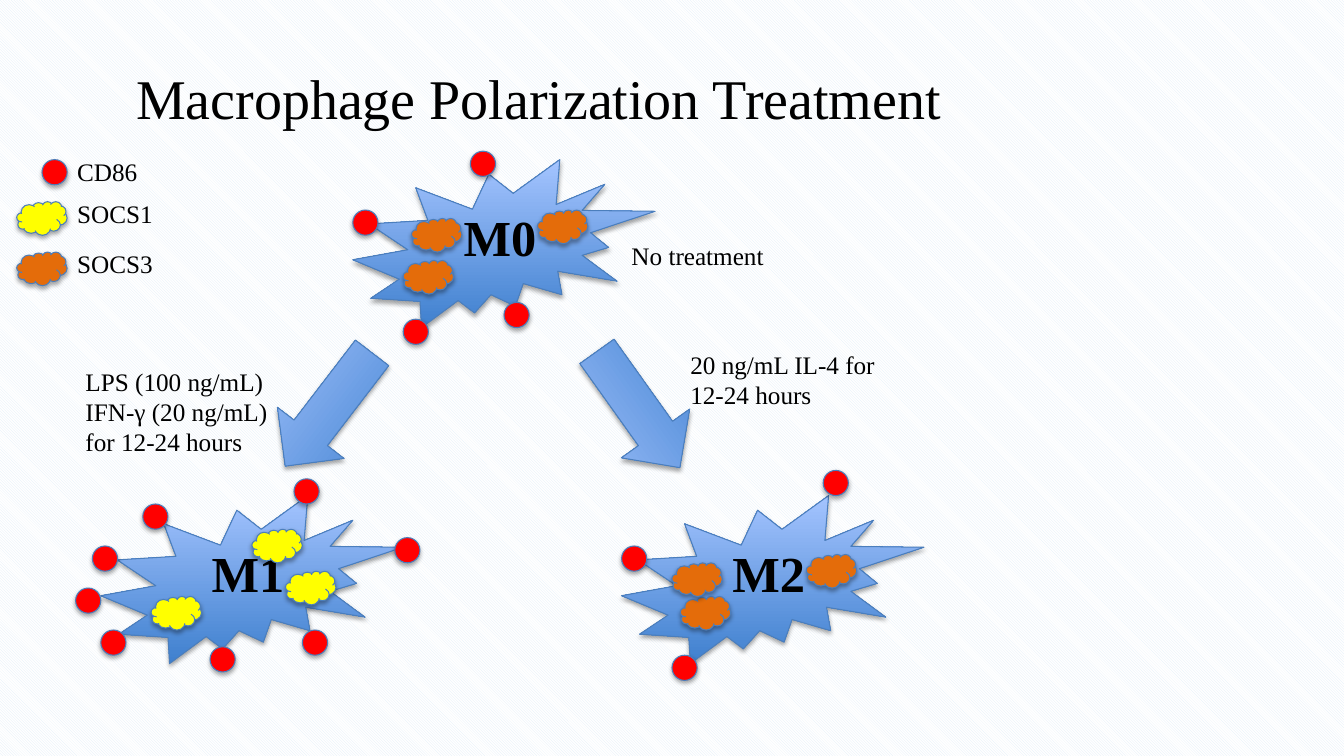
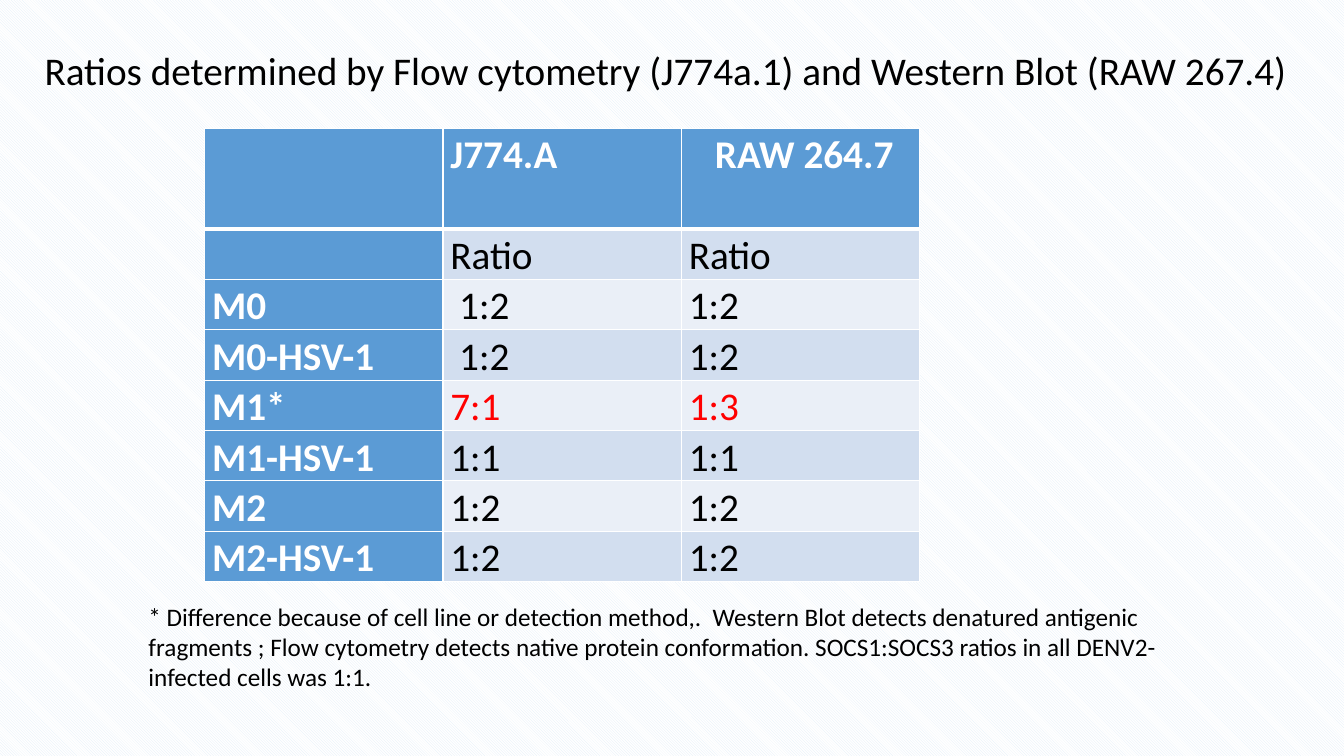
from dataclasses import dataclass

from lxml.etree import SubElement
from pptx import Presentation
from pptx.dml.color import RGBColor
from pptx.enum.dml import MSO_PATTERN
from pptx.enum.shapes import MSO_SHAPE
from pptx.enum.text import MSO_ANCHOR, PP_ALIGN
from pptx.oxml import parse_xml
from pptx.oxml.ns import nsdecls, qn
from pptx.presentation import Presentation as Deck
from pptx.shapes.autoshape import Shape
from pptx.slide import Slide
from pptx.table import _Cell
from pptx.text.text import TextFrame
from pptx.util import Emu, Pt

EMU_PER_PX = 9525
SLIDE_SIZE = (1280, 720)

BLACK = RGBColor(0x00, 0x00, 0x00)
WHITE = RGBColor(0xFF, 0xFF, 0xFF)
RED = RGBColor(0xFF, 0x00, 0x00)
YELLOW = RGBColor(0xFF, 0xFF, 0x00)
ORANGE = RGBColor(0xE4, 0x6C, 0x0A)
STRIPE = RGBColor(0xDE, 0xEB, 0xF7)
OUTLINE = RGBColor(0x4B, 0x7E, 0xBC)
DEEP_BLUE = RGBColor(0x3F, 0x80, 0xCE)
SOFT_BLUE = RGBColor(0xA4, 0xC4, 0xFF)
HEADER_BLUE = RGBColor(0x5B, 0x9B, 0xD5)
BAND_DARK = RGBColor(0xD2, 0xDE, 0xEF)
BAND_LIGHT = RGBColor(0xEA, 0xEF, 0xF7)

SERIF = "Times New Roman"
SANS = "Calibri"

Point = tuple[int, int]
Box = tuple[int, int, int, int]


@dataclass(frozen=True)
class Marker:
    label: str
    preset: MSO_SHAPE
    color: RGBColor
    size: Point


CD86 = Marker("CD86", MSO_SHAPE.OVAL, RED, (24, 24))
SOCS1 = Marker("SOCS1", MSO_SHAPE.CLOUD, YELLOW, (48, 32))
SOCS3 = Marker("SOCS3", MSO_SHAPE.CLOUD, ORANGE, (48, 32))


@dataclass(frozen=True)
class Macrophage:
    """A cell; marker places are offsets from its top left corner."""
    name: str
    left: int
    top: int
    markers: dict[Marker, list[Point]]


@dataclass(frozen=True)
class Treatment:
    text: str
    box: Box


@dataclass(frozen=True)
class RatioRow:
    phenotype: str
    j774: str
    raw: str
    color: RGBColor = BLACK


MACROPHAGES = [
    Macrophage("M0", 336, 152, {
        CD86: [(112, -8), (0, 48), (48, 152), (144, 136)],
        SOCS3: [(48, 96), (176, 48), (56, 56)],
    }),
    Macrophage("M1", 96, 472, {
        CD86: [(184, -16), (104, 144), (280, 40), (0, 128),
               (-24, 88), (40, 8), (192, 128), (-8, 48)],
        SOCS1: [(176, 72), (144, 32), (48, 96)],
    }),
    Macrophage("M2", 592, 472, {
        CD86: [(192, -24), (48, 152), (0, 48)],
        SOCS3: [(176, 56), (56, 96), (48, 64)],
    }),
]
LEGEND = [(CD86, 152), (SOCS1, 192), (SOCS3, 240)]
LEGEND_RIGHT = 64
TREATMENTS = [
    Treatment("No treatment", (592, 224, 288, 38)),
    Treatment("LPS (100 ng/mL)\nIFN-γ (20 ng/mL)\nfor 12-24 hours", (72, 344, 288, 97)),
    Treatment("20 ng/mL IL-4 for 12-24 hours", (648, 328, 217, 68)),
]
ARROWS = [(245, 307.5), (540, 234.5)]

RATIOS = [
    RatioRow("", "Ratio", "Ratio"),
    RatioRow("M0", " 1:2", "1:2"),
    RatioRow("M0-HSV-1", " 1:2", "1:2"),
    RatioRow("M1*", "7:1", "1:3", RED),
    RatioRow("M1-HSV-1", "1:1", "1:1"),
    RatioRow("M2", "1:2", "1:2"),
    RatioRow("M2-HSV-1", "1:2", "1:2"),
]
CELL_INSET = 7
RAW_HEADER_INSET = 32
COLUMN_WIDTH, HEADER_HEIGHT, ROW_HEIGHT = 227, 96, 48
FOOTNOTE = (
    "* Difference because of cell line or detection method,.  Western Blot detects "
    "denatured antigenic fragments ; Flow cytometry detects native protein conformation. "
    "SOCS1:SOCS3 ratios in all DENV2-infected cells was 1:1."
)


def px(length: int) -> Emu:
    return Emu(length * EMU_PER_PX)


def write(frame: TextFrame, text: str, *, size: int = 18, font: str = SERIF,
          color: RGBColor = BLACK, bold: bool = False,
          align: PP_ALIGN = PP_ALIGN.LEFT, spacing: float | None = None) -> None:
    """Fill the frame, one paragraph for each line of text."""
    frame.text = text
    for paragraph in frame.paragraphs:
        paragraph.alignment = align
        paragraph.line_spacing = spacing
        for run in paragraph.runs:
            run.font.name = font
            run.font.size = Pt(size)
            run.font.bold = bold
            run.font.color.rgb = color


def add_text(slide: Slide, box: Box, text: str,
             anchor: MSO_ANCHOR = MSO_ANCHOR.TOP, **text_format) -> None:
    frame = slide.shapes.add_textbox(*map(px, box)).text_frame
    frame.word_wrap = True
    frame.vertical_anchor = anchor
    write(frame, text, **text_format)


def add_shadow(shape: Shape) -> None:
    shape.shadow.inherit = False
    effects = shape._element.spPr.find(qn("a:effectLst"))
    shadow = SubElement(effects, qn("a:outerShdw"), blurRad="40000", dist="23000",
                        dir="5400000", rotWithShape="0")
    color = SubElement(shadow, qn("a:srgbClr"), val=str(BLACK))
    SubElement(color, qn("a:alpha"), val="35000")


def add_figure(slide: Slide, preset: MSO_SHAPE, box: Box,
               color: RGBColor | None = None, rotation: float = 0) -> None:
    """Draw an outlined, shadowed shape; without a colour it gets the blue gradient."""
    figure = slide.shapes.add_shape(preset, *map(px, box))
    figure.rotation = rotation
    if color is None:
        figure.fill.gradient()
        figure.fill.gradient_angle = 90
        for stop, shade in zip(figure.fill.gradient_stops, (DEEP_BLUE, SOFT_BLUE)):
            stop.color.rgb = shade
    else:
        figure.fill.solid()
        figure.fill.fore_color.rgb = color
    figure.line.color.rgb = OUTLINE
    figure.line.width = Pt(0.75)
    add_shadow(figure)


def add_marker(slide: Slide, marker: Marker, left: int, top: int) -> None:
    add_figure(slide, marker.preset, (left, top, *marker.size), marker.color)


def add_macrophage(slide: Slide, cell: Macrophage) -> None:
    add_figure(slide, MSO_SHAPE.EXPLOSION2, (cell.left, cell.top, 288, 160))
    add_text(slide, (cell.left + 96, cell.top + 40, 112, 68), cell.name, size=36, bold=True)
    for marker, offsets in cell.markers.items():
        for dx, dy in offsets:
            add_marker(slide, marker, cell.left + dx, cell.top + dy)


def set_borders(cell: _Cell, top: int, bottom: int) -> None:
    """White borders on all sides, with top and bottom widths in points."""
    properties = cell._tc.get_or_add_tcPr()
    for index, (side, width) in enumerate((("L", 1), ("R", 1), ("T", top), ("B", bottom))):
        properties.insert(index, parse_xml(
            f'<a:ln{side} {nsdecls("a")} w="{Pt(width)}"><a:solidFill>'
            f'<a:srgbClr val="{WHITE}"/></a:solidFill></a:ln{side}>'))


def style_cell(cell: _Cell, text: str, fill: RGBColor, color: RGBColor,
               bold: bool, inset: int = CELL_INSET) -> None:
    cell.fill.solid()
    cell.fill.fore_color.rgb = fill
    cell.margin_left, cell.margin_right = px(inset), px(CELL_INSET)
    cell.margin_top = cell.margin_bottom = 0
    write(cell.text_frame, text, size=28, font=SANS, color=color, bold=bold, spacing=1.07)


def add_ratio_table(slide: Slide) -> None:
    row_count = len(RATIOS) + 1
    height = HEADER_HEIGHT + ROW_HEIGHT * len(RATIOS)
    table = slide.shapes.add_table(
        row_count, 3, *map(px, (195, 122, COLUMN_WIDTH * 3, height))).table
    for index, row in enumerate(table.rows):
        row.height = px(ROW_HEIGHT if index else HEADER_HEIGHT)
    headers = (("", CELL_INSET), ("J774.A", CELL_INSET), ("RAW 264.7", RAW_HEADER_INSET))
    for column, (header, inset) in enumerate(headers):
        style_cell(table.cell(0, column), header, HEADER_BLUE, WHITE, True, inset)
    for index, ratio in enumerate(RATIOS, start=1):
        band = BAND_DARK if index % 2 else BAND_LIGHT
        style_cell(table.cell(index, 0), ratio.phenotype, HEADER_BLUE, WHITE, True)
        for column, value in enumerate((ratio.j774, ratio.raw), start=1):
            style_cell(table.cell(index, column), value, band, ratio.color, False)
    for index in range(row_count):
        for column in range(3):
            set_borders(table.cell(index, column),
                        top=3 if index == 1 else 1, bottom=3 if index == 0 else 1)


def set_striped_background(deck: Deck) -> None:
    fill = deck.slide_master.background.fill
    fill.patterned()
    fill.pattern = MSO_PATTERN.LIGHT_DOWNWARD_DIAGONAL
    fill.fore_color.rgb = STRIPE
    fill.back_color.rgb = WHITE


def build_polarization_slide(slide: Slide) -> None:
    add_text(slide, (81, 32, 864, 120), "Macrophage Polarization Treatment",
             anchor=MSO_ANCHOR.MIDDLE, size=40, align=PP_ALIGN.CENTER)
    for left, rotation in ARROWS:
        add_figure(slide, MSO_SHAPE.LEFT_ARROW, (left, 350, 136, 80), rotation=rotation)
    for cell in MACROPHAGES:
        add_macrophage(slide, cell)
    for marker, top in LEGEND:
        add_marker(slide, marker, LEGEND_RIGHT - marker.size[0], top)
        add_text(slide, (LEGEND_RIGHT, top - 8, 120, 40), marker.label)
    for treatment in TREATMENTS:
        add_text(slide, treatment.box, treatment.text)


def build_ratio_slide(slide: Slide) -> None:
    add_ratio_table(slide)
    add_text(slide, (33, 39, 1224, 54),
             "Ratios determined by Flow cytometry (J774a.1) and Western Blot (RAW 267.4)",
             size=28, font=SANS)
    add_text(slide, (132, 568, 1020, 97), FOOTNOTE, font=SANS)


def main() -> None:
    deck = Presentation()
    deck.slide_width, deck.slide_height = map(px, SLIDE_SIZE)
    set_striped_background(deck)
    blank = deck.slide_layouts[6]
    for build in (build_polarization_slide, build_ratio_slide):
        build(deck.slides.add_slide(blank))
    deck.save("out.pptx")


if __name__ == "__main__":
    main()
